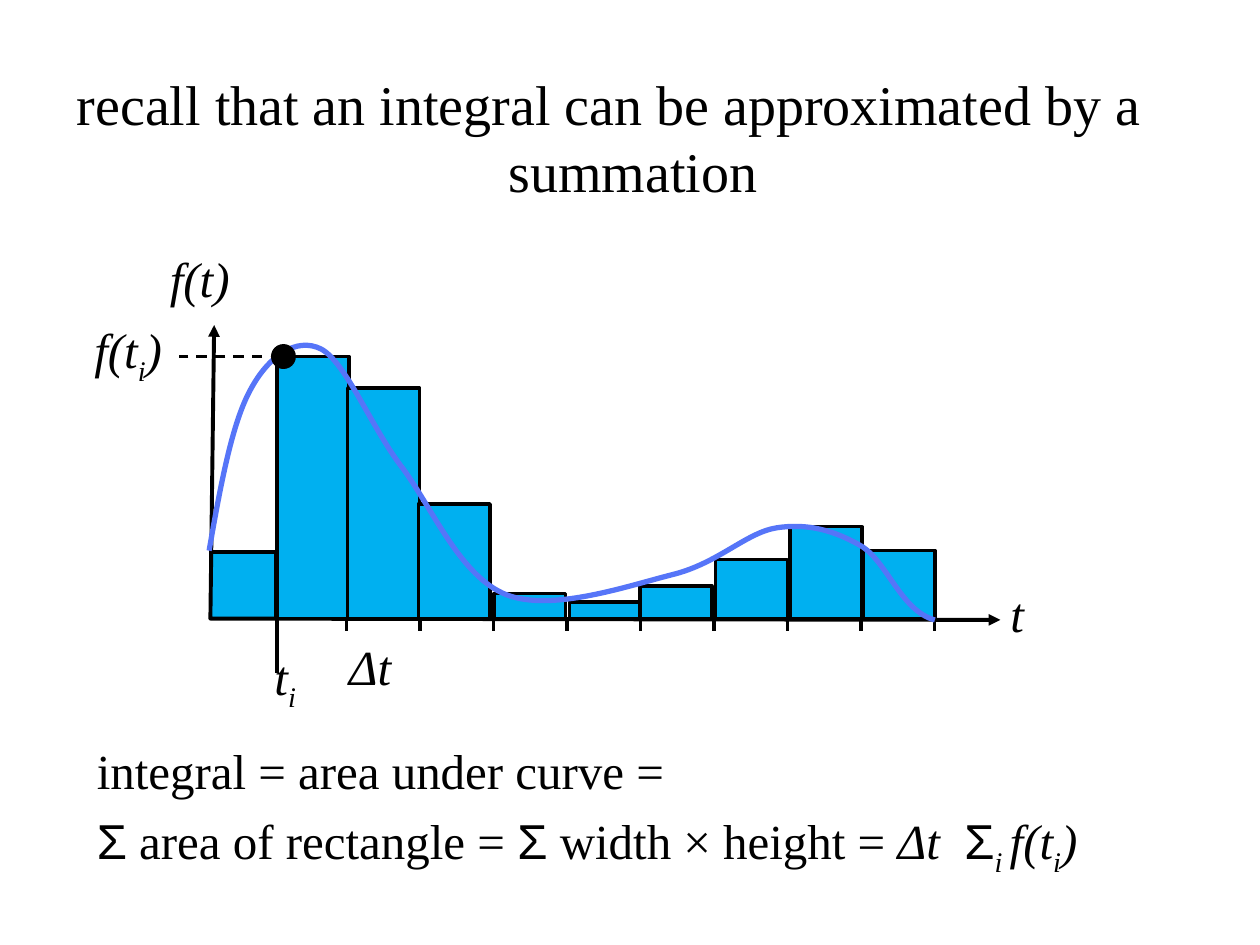
from dataclasses import dataclass

import pptx
import pptx.dml.color
import pptx.enum.dml
import pptx.enum.shapes
import pptx.enum.text
import pptx.oxml.ns
import pptx.util
from lxml import etree

Inches = pptx.util.Inches
Pt = pptx.util.Pt
qn = pptx.oxml.ns.qn
RGBColor = pptx.dml.color.RGBColor
ShapeType = pptx.enum.shapes.MSO_SHAPE


@dataclass(frozen=True)
class Theme:
    ink: RGBColor = RGBColor(0, 0, 0)
    bar: RGBColor = RGBColor(0x00, 0xB0, 0xF0)
    curve: RGBColor = RGBColor(0x56, 0x75, 0xF8)
    serif: str = "Times New Roman"
    sans: str = "Arial"
    title_size: int = 32
    body_size: int = 28
    outline: float = 2
    axis: float = 2.25
    curve_width: float = 3
    guide: float = 1.5


class SlideBuilder:
    def __init__(self, slide, theme):
        self.slide = slide
        self.theme = theme

    def outline(self, shape, color, width):
        shape.line.color.rgb = color
        shape.line.width = Pt(width)

    def shape(self, kind, left, top, width, height, fill):
        shape = self.slide.shapes.add_shape(
            kind, Inches(left), Inches(top), Inches(width), Inches(height))
        shape.shadow.inherit = False
        shape.fill.solid()
        shape.fill.fore_color.rgb = fill
        self.outline(shape, self.theme.ink, self.theme.outline)

    def line(self, start, end, width, dashed=False):
        connector = self.slide.shapes.add_connector(
            pptx.enum.shapes.MSO_CONNECTOR.STRAIGHT,
            *(Inches(value) for value in (*start, *end)))
        self.outline(connector, self.theme.ink, width)
        if dashed:
            connector.line.dash_style = pptx.enum.dml.MSO_LINE.DASH
        etree.SubElement(connector._element.spPr, qn("a:effectLst"))

    def open_path(self, points, color, width):
        first, *rest = [(Inches(x), Inches(y)) for x, y in points]
        builder = self.slide.shapes.build_freeform(*first)
        builder.add_line_segments(rest, close=False)
        shape = builder.convert_to_shape()
        shape.shadow.inherit = False
        shape.fill.background()
        self.outline(shape, color, width)
        return shape

    def axes(self, points):
        shape = self.open_path(points, self.theme.ink, self.theme.axis)
        line = shape._element.spPr.find(qn("a:ln"))
        for end in ("a:headEnd", "a:tailEnd"):
            etree.SubElement(line, qn(end), type="triangle")

    def curve(self, points):
        """Draw a Bezier path: a start, then two controls and an end per segment."""
        shape = self.open_path(points, self.theme.curve, self.theme.curve_width)
        path_element = next(shape._element.iter(qn("a:path")))
        segments = path_element.findall(qn("a:lnTo"))
        for index in range(0, len(segments), 3):
            bezier = etree.SubElement(path_element, qn("a:cubicBezTo"))
            for segment in segments[index:index + 3]:
                bezier.append(segment[0])
                path_element.remove(segment)

    def text(self, left, top, width, height, paragraphs, size=None,
             italic=False, centered=False, hanging=False):
        """Each paragraph is a list of (text, style); style is "", italic, sub or sans."""
        theme = self.theme
        box = self.slide.shapes.add_textbox(
            Inches(left), Inches(top), Inches(width), Inches(height))
        frame = box.text_frame
        frame.word_wrap = True
        for index, pieces in enumerate(paragraphs):
            paragraph = frame.paragraphs[0] if index == 0 else frame.add_paragraph()
            font = paragraph.font
            font.size = Pt(size or theme.body_size)
            font.color.rgb = theme.ink
            if all(style != "sans" for _, style in pieces):
                font.name = theme.serif
            if italic:
                font.italic = True
            if centered:
                paragraph.alignment = pptx.enum.text.PP_ALIGN.CENTER
            if hanging:
                paragraph.space_before = Pt(6.5)
                properties = paragraph._p.get_or_add_pPr()
                properties.set("marL", str(Inches(0.38)))
                properties.set("indent", str(Inches(-0.38)))
            for content, style in pieces:
                run = paragraph.add_run()
                run.text = content
                if font.name is None:
                    run.font.name = theme.sans if style == "sans" else theme.serif
                if style in ("italic", "sub") and not italic:
                    run.font.italic = True
                if style == "sub":
                    run._r.get_or_add_rPr().set("baseline", "-25000")


def main():
    presentation = pptx.Presentation()
    presentation.slide_width = Inches(10)
    presentation.slide_height = Inches(7.5)
    theme = Theme()
    builder = SlideBuilder(
        presentation.slides.add_slide(presentation.slide_layouts[6]), theme)

    baseline = 4.91
    sample = (2.25, 2.83)

    def bar(left, top, width=0.57):
        builder.shape(ShapeType.RECTANGLE, left, top, width, baseline - top, theme.bar)

    bar(1.67, 4.38, 0.52)
    builder.axes([(1.7, 2.58), (1.67, baseline), (7.94, 4.92)])
    builder.line((2.2, baseline), (2.2, 5.34), theme.axis)
    for index in range(9):
        x = 2.75 + index * 7 / 12
        builder.line((x, baseline), (x, baseline + 0.1), theme.axis)
    builder.text(7.92, 4.58, 0.5, 0.58, [[("t", "")]], italic=True)

    builder.text(0, 0.5, 9.67, 1.67,
                 [[("recall that an integral can be approximated by a summation", "")]],
                 size=theme.title_size, centered=True, hanging=True)

    for left, top in [(2.2, 2.83), (2.76, 3.08), (3.32, 4), (3.92, 4.71), (4.52, 4.78),
                      (5.08, 4.65), (5.68, 4.44), (6.27, 4.18), (6.85, 4.37)]:
        bar(left, top)
    builder.curve([
        (1.66, 4.37),
        (1.75, 3.86), (1.84, 3.36), (1.99, 3.09),
        (2.13, 2.83), (2.35, 2.67), (2.55, 2.77),
        (2.75, 2.88), (2.95, 3.4), (3.2, 3.72),
        (3.44, 4.05), (3.66, 4.58), (4.02, 4.72),
        (4.38, 4.86), (4.98, 4.65), (5.34, 4.56),
        (5.7, 4.47), (5.92, 4.23), (6.16, 4.19),
        (6.41, 4.15), (6.62, 4.21), (6.83, 4.33),
        (7.04, 4.45), (7.15, 4.85), (7.42, 4.92),
    ])

    value_at_sample = [("f(t", "italic"), ("i", "sub"), (")", "italic")]
    builder.text(0.67, 5.83, 10, 0.75, [
        [("integral = area under curve =", "")],
        [("Σ", "sans"), (" area of rectangle = ", ""), ("Σ", "sans"),
         (" width × height = ", ""), ("Δt  ", "italic"), ("Σ", "sans"),
         ("i ", "sub"), *value_at_sample],
    ], hanging=True)

    builder.text(1.25, 1.92, 1.42, 0.57, [[("f(t)", "")]], italic=True)
    dot = 0.17
    builder.shape(ShapeType.OVAL, sample[0] - dot / 2, sample[1] - dot / 2,
                  dot, dot, theme.ink)
    builder.line((2.08, sample[1]), (1.42, sample[1]), theme.guide, dashed=True)
    builder.text(0.65, 2.49, 1.42, 0.57, [value_at_sample], italic=True)
    builder.text(2.58, 5, 0.75, 0.57, [[(" Δt", "")]], italic=True)
    builder.text(2.08, 5.08, 0.75, 0.57, [[("t", ""), ("i", "sub")]], italic=True)

    presentation.save("out.pptx")


if __name__ == "__main__":
    main()
